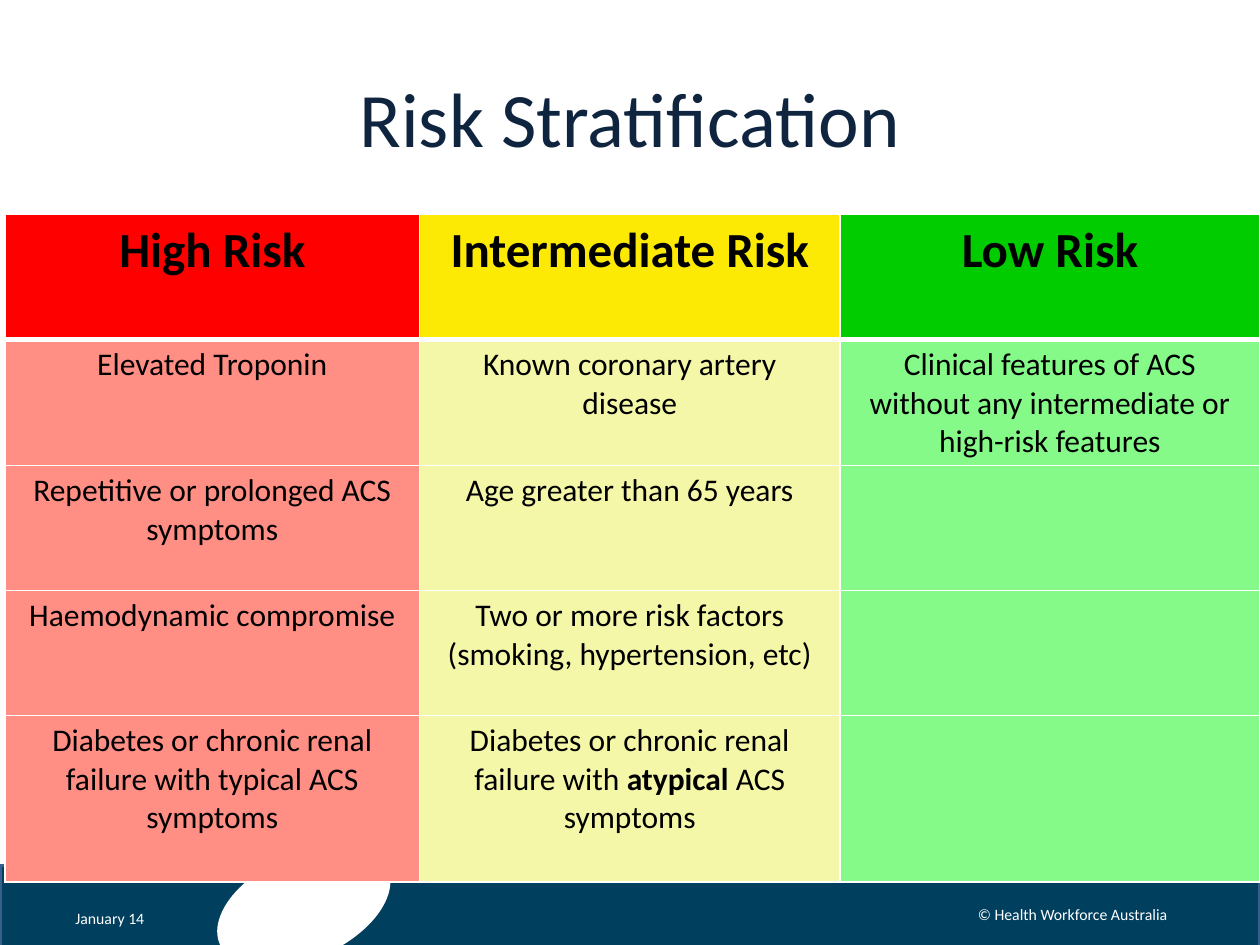
from pptx import Presentation
from pptx.dml.color import RGBColor
from pptx.enum.shapes import MSO_SHAPE as Shape
from pptx.enum.text import MSO_ANCHOR as Anchor, PP_ALIGN as Align
from pptx.oxml import parse_xml
from pptx.oxml.ns import nsdecls
from pptx.util import Cm, Pt

COLOURS = {
    "white": "FFFFFF", "black": "000000", "navy": "0F243E",
    "footer": "003F5E", "footer_edge": "3A5F8C",
    "high": "FF0000", "intermediate": "FCEA04", "low": "00CC00",
    "high_pale": "FF8E85", "intermediate_pale": "F4F6A8", "low_pale": "86FA89",
}
RISKS = ["high", "intermediate", "low"]
# Each entry is a list of text runs; every second run is bold.
CRITERIA = [
    [["Elevated Troponin"], ["Known coronary artery disease"],
     ["Clinical features of ACS without any intermediate or high-risk features"]],
    [["Repetitive or prolonged ACS symptoms"], ["Age greater than 65 years"], []],
    [["Haemodynamic compromise"],
     ["Two or more risk factors (smoking, hypertension, etc)"], []],
    [["Diabetes or chronic renal failure with typical ACS symptoms"],
     ["Diabetes or chronic renal failure with ", "atypical", " ACS symptoms"], []],
]


def rgb(name):
    return RGBColor.from_string(COLOURS[name])


def add_run(paragraph, text, colour, **formats):
    run = paragraph.add_run()
    run.text = text
    for attribute, value in {"name": "Calibri", **formats}.items():
        setattr(run.font, attribute, value)
    run.font.color.rgb = rgb(colour)


deck = Presentation()
deck.slide_width, deck.slide_height = Cm(25.4), Cm(19.05)
slide = deck.slides.add_slide(deck.slide_layouts[6])
shapes = slide.shapes

# Footer band with the white ellipse cut into it
band = shapes.add_shape(Shape.RECTANGLE, 0, Cm(17.45), Cm(25.4), Cm(1.65))
ellipse = shapes.add_shape(Shape.OVAL, Cm(4.27), Cm(17.22), Cm(3.71), Cm(2.11))
for part, fill in ((band, "footer"), (ellipse, "white")):
    part.shadow.inherit = False
    part.fill.solid()
    part.fill.fore_color.rgb = rgb(fill)
band.line.color.rgb = rgb("footer_edge")
band.line.width = Pt(2)
ellipse.line.fill.background()
ellipse.rotation = 335.7

# Title and footer texts
captions = [
    ("Risk Stratification", (1.27, 0.76, 22.86, 3.18), 44, "navy", Align.CENTER),
    ("January 14", (1.27, 18.14, 2.03, 0.74), 9, "white", Align.LEFT),
    ("© Health Workforce Australia", (18.9, 17.93, 5.44, 1.02), 9, "white", Align.CENTER),
]
for text, place, size, colour, align in captions:
    frame = shapes.add_textbox(*map(Cm, place)).text_frame
    for attribute, value in {"word_wrap": True, "vertical_anchor": Anchor.MIDDLE}.items():
        setattr(frame, attribute, value)
    frame.paragraphs[0].alignment = align
    add_run(frame.paragraphs[0], text, colour, size=Pt(size))

# Risk table
row_heights = [2.52] * 4 + [3.36]
column_widths = [8.36, 8.47, 8.47]
table = shapes.add_table(len(row_heights), len(column_widths), Cm(0.1), Cm(4.32),
                         Cm(sum(column_widths)), Cm(sum(row_heights))).table
for row, height in zip(table.rows, row_heights):
    row.height = Cm(height)
for column, width in zip(table.columns, column_widths):
    column.width = Cm(width)

headings = [[f"{risk.title()} Risk"] for risk in RISKS]
for r, entries in enumerate([headings] + CRITERIA):
    is_heading = r == 0
    for c, (risk, runs) in enumerate(zip(RISKS, entries)):
        cell = table.cell(r, c)
        properties = cell._tc.get_or_add_tcPr()
        for side in "LRTB":
            under_heading = (r, side) in ((0, "B"), (1, "T"))
            width = Pt(3 if under_heading else 1)
            properties.append(parse_xml(
                f'<a:ln{side} {nsdecls("a")} w="{width}"><a:solidFill>'
                f'<a:srgbClr val="{COLOURS["white"]}"/></a:solidFill></a:ln{side}>'))
        cell.fill.solid()
        cell.fill.fore_color.rgb = rgb(risk if is_heading else f"{risk}_pale")
        paragraph = cell.text_frame.paragraphs[0]
        paragraph.alignment = Align.CENTER
        for i, text in enumerate(runs):
            add_run(paragraph, text, "black", size=Pt(28 if is_heading else 18),
                    bold=is_heading or i % 2 == 1)

deck.save("out.pptx")
